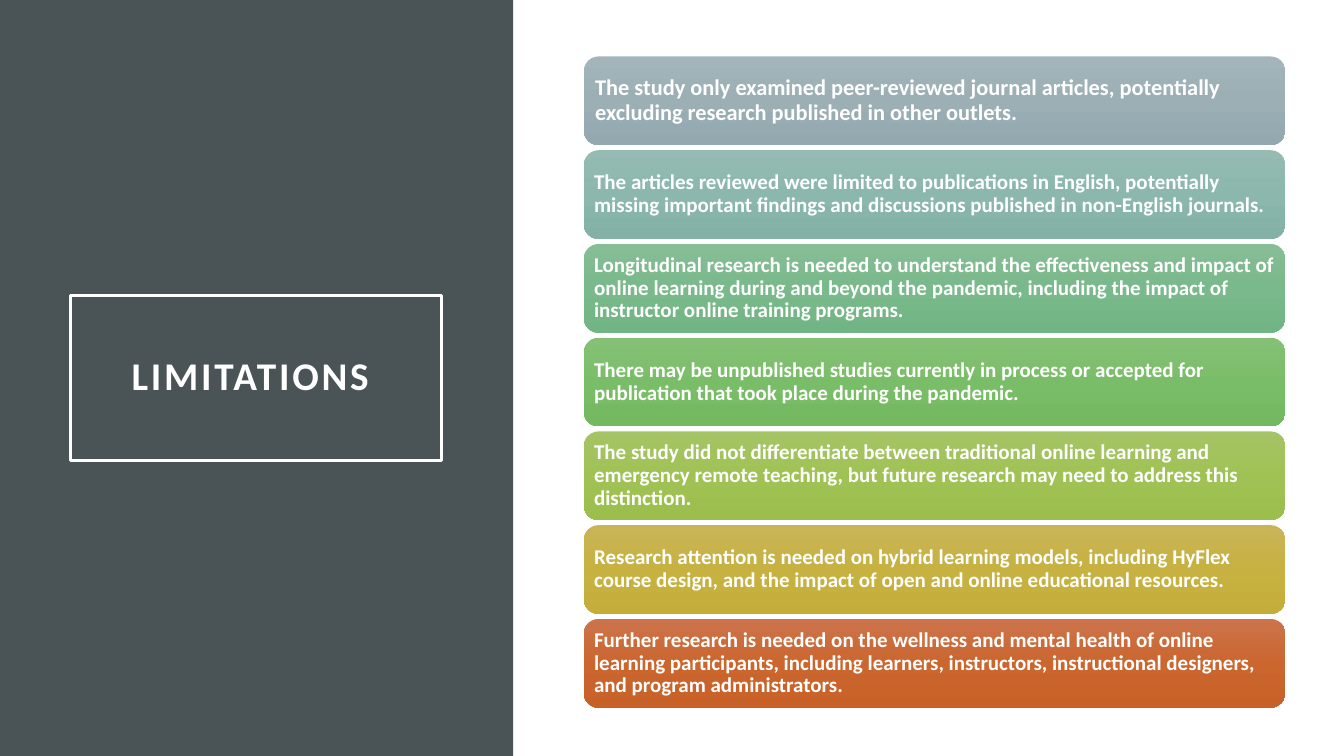
from copy import deepcopy
from dataclasses import dataclass

from pptx import Presentation
from pptx import util as u
from pptx.dml.color import RGBColor
from pptx.enum import shapes, text
from pptx.oxml.ns import qn


@dataclass(frozen=True)
class Theme:
    font: str = "Calibri"
    white: str = "FFFFFF"
    panel: str = "4A5356"
    title_size: int = 28
    lead_size: int = 16
    body_size: int = 15


# Each limitation with its gradient: top, middle, bottom
LIMITATIONS = [
    ("The study only examined peer-reviewed journal articles, potentially "
     "excluding research published in other outlets.",
     ("A3B5BB", "9BAFB5", "93A9AF")),
    ("The articles reviewed were limited to publications in English, potentially "
     "missing important findings and discussions published in non-English journals.",
     ("95BBB2", "8BB7AC", "83B1A6")),
    ("Longitudinal research is needed to understand the effectiveness and impact "
     "of online learning during and beyond the pandemic, including the impact of "
     "instructor online training programs.",
     ("86BD95", "7AB98B", "72B584")),
    ("There may be unpublished studies currently in process or accepted for "
     "publication that took place during the pandemic.",
     ("85C076", "7ABD68", "73B960")),
    ("The study did not differentiate between traditional online learning and "
     "emergency remote teaching, but future research may need to address this "
     "distinction.",
     ("A5C466", "A0C255", "9BBE4D")),
    ("Research attention is needed on hybrid learning models, including HyFlex "
     "course design, and the impact of open and online educational resources.",
     ("C9B557", "C7B141", "C4AD39")),
    ("Further research is needed on the wellness and mental health of online "
     "learning participants, including learners, instructors, instructional "
     "designers, and program administrators.",
     ("CC734B", "CB662F", "C86128")),
]


class SlideBuilder:
    def __init__(self, slide, theme):
        self.s = slide
        self.theme = theme

    def shape(self, kind, left, top, width, height):
        sp = self.s.shapes.add_shape(kind, *map(u.Inches, (left, top, width, height)))
        sp.shadow.inherit = False
        sp.line.fill.background()
        return sp

    def label(self, sp, words, size, inset, align):
        tf = sp.text_frame
        tf.word_wrap = True
        tf.vertical_anchor = text.MSO_ANCHOR.MIDDLE
        tf.margin_left = tf.margin_right = u.Inches(inset)
        tf.margin_top = tf.margin_bottom = u.Inches(inset)
        p = tf.paragraphs[0]
        p.text = words
        p.alignment = align
        p.line_spacing = 0.9
        p.font.name = self.theme.font
        p.font.size = u.Pt(size)
        p.font.bold = True
        p.font.color.rgb = RGBColor.from_string(self.theme.white)
        return p

    def panel(self, left, top, width, height):
        sp = self.shape(shapes.MSO_SHAPE.RECTANGLE, left, top, width, height)
        sp.fill.solid()
        sp.fill.fore_color.rgb = RGBColor.from_string(self.theme.panel)

    def title(self, words, left, top, width, height):
        sp = self.shape(shapes.MSO_SHAPE.RECTANGLE, left, top, width, height)
        sp.fill.background()
        sp.line.color.rgb = RGBColor.from_string(self.theme.white)
        sp.line.width = u.Pt(2.5)
        p = self.label(sp, words, self.theme.title_size, 0.2, text.PP_ALIGN.CENTER)
        # Letter spacing in hundredths of a point
        p.runs[0]._r.get_or_add_rPr().set("spc", "200")

    def card(self, words, colours, size, inset, left, top, width, height):
        sp = self.shape(shapes.MSO_SHAPE.ROUNDED_RECTANGLE, left, top, width, height)
        sp.fill.gradient()
        sp.fill.gradient_angle = 270
        # The default gradient has two stops; add a middle one
        stops = next(sp._element.spPr.iter(qn("a:gsLst")))
        stops.insert(1, deepcopy(stops[0]))
        for i, (stop, colour) in enumerate(zip(sp.fill.gradient_stops, colours)):
            stop.position = i / 2
            stop.color.rgb = RGBColor.from_string(colour)
        self.label(sp, words, size, inset, text.PP_ALIGN.LEFT)


def main():
    prs = Presentation()
    prs.slide_width, prs.slide_height = u.Inches(13.33), u.Inches(7.5)
    theme = Theme()
    b = SlideBuilder(prs.slides.add_slide(prs.slide_layouts[6]), theme)

    # Left panel with the framed title
    b.panel(0, 0, 5.09, 7.5)
    b.title("LIMITATIONS ", 0.7, 2.93, 3.68, 1.64)

    # Column of cards; the first is set slightly larger
    for i, (words, colours) in enumerate(LIMITATIONS):
        size, inset = (theme.body_size, 0.06) if i else (theme.lead_size, 0.07)
        b.card(words, colours, size, inset, 5.79, 0.56 + 0.93 * i, 6.96, 0.88)

    prs.save("out.pptx")


if __name__ == "__main__":
    main()
